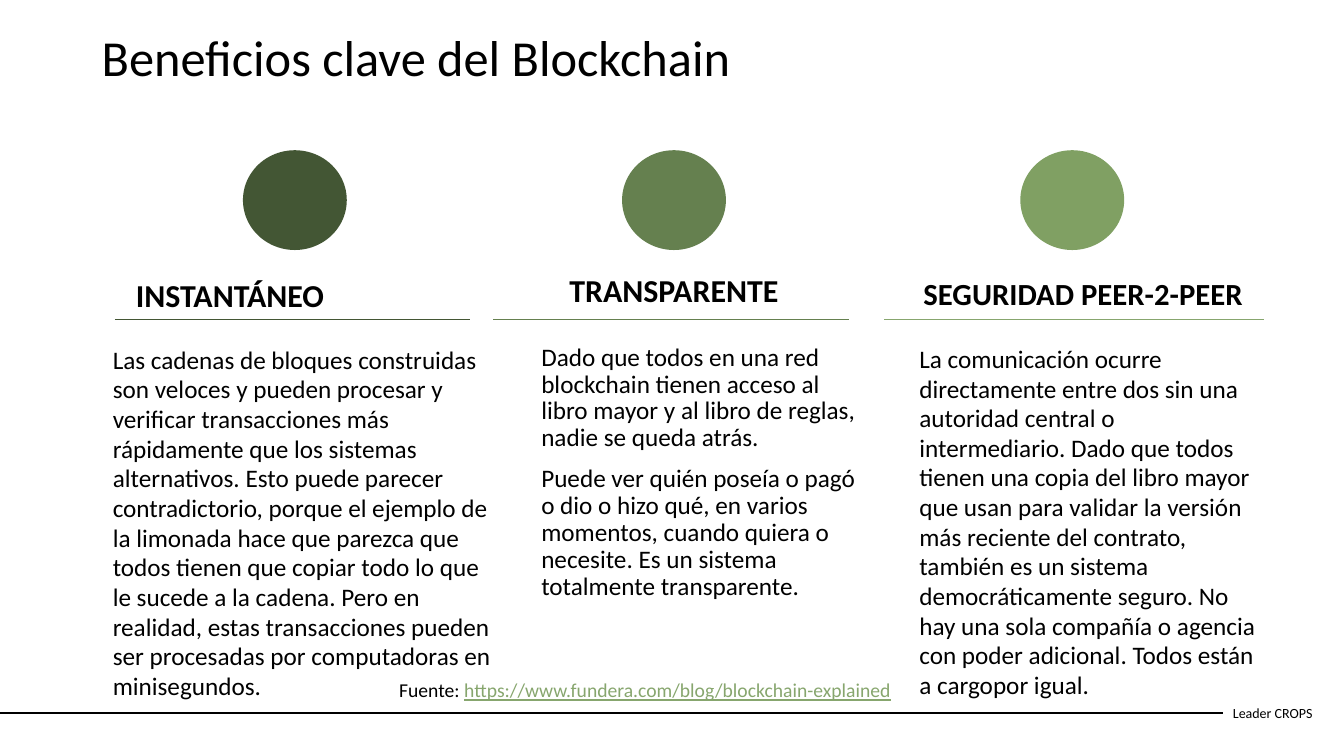
import pptx
import pptx.util
import pptx.dml.color
import pptx.enum.shapes
import pptx.enum.text
import pptx.oxml.ns
from lxml import etree

Inches = pptx.util.Inches
Pt = pptx.util.Pt
ALIGN = pptx.enum.text.PP_ALIGN
ANCHOR = pptx.enum.text.MSO_ANCHOR

FONT = "Calibri"
COLORS = {
    "text": "000000",
    "instant": "435634",
    "transparent": "65804F",
    "secure": "80A063",
    "accent": "87A66E",
}

BENEFITS = [
    {
        "color": "instant", "rule_color": "instant", "rule_width": 1,
        "circle_left": 2.41, "rule": (1.14, 4.66),
        "heading": "INSTANTÁNEO", "heading_box": (1.25, 2.68, 3.35, 0.98),
        "heading_size": 22.8, "heading_align": ALIGN.LEFT, "heading_spacing": 1.0,
        "body_box": (1.02, 3.38, 4.02, 2.53), "body_spacing": 0.98,
        "body": [
            "Las cadenas de bloques construidas son veloces y pueden procesar y "
            "verificar transacciones más rápidamente que los sistemas alternativos. "
            "Esto puede parecer contradictorio, porque el ejemplo de la limonada hace "
            "que parezca que todos tienen que copiar todo lo que le sucede a la cadena. "
            "Pero en realidad, estas transacciones pueden ser procesadas por "
            "computadoras en minisegundos.",
        ],
    },
    {
        "color": "transparent", "rule_color": "transparent", "rule_width": 0.5,
        "circle_left": 6.17, "rule": (4.89, 8.42),
        "heading": "TRANSPARENTE", "heading_box": (5.01, 2.68, 3.35, 0.98),
        "heading_size": 22.8, "heading_align": ALIGN.CENTER, "heading_spacing": 0.9,
        "body_box": (5.27, 3.37, 3.35, 2.7), "body_spacing": 0.89,
        "body": [
            "Dado que todos en una red blockchain tienen acceso al libro mayor y al "
            "libro de reglas, nadie se queda atrás.",
            "Puede ver quién poseía o pagó o dio o hizo qué, en varios momentos, cuando "
            "quiera o necesite. Es un sistema totalmente transparente.",
        ],
    },
    {
        "color": "secure", "rule_color": "accent", "rule_width": 0.5,
        "circle_left": 10.12, "rule": (8.77, 12.54),
        "heading": "SEGURIDAD PEER-2-PEER", "heading_box": (9.06, 2.68, 4.12, 0.39),
        "heading_size": 21.9, "heading_align": ALIGN.LEFT, "heading_spacing": 1.0,
        "body_box": (9.02, 3.37, 3.53, 2.52), "body_spacing": 0.98,
        "body": [
            "La comunicación ocurre directamente entre dos sin una autoridad central o "
            "intermediario. Dado que todos tienen una copia del libro mayor que usan "
            "para validar la versión más reciente del contrato, también es un sistema "
            "democráticamente seguro. No hay una sola compañía o agencia con poder "
            "adicional. Todos están a cargopor igual.",
        ],
    },
]


def rgb(name):
    return pptx.dml.color.RGBColor.from_string(COLORS[name])


def add_text(slide, box, paragraphs, size, bold=False, align=ALIGN.LEFT,
             spacing=1.0, anchor=ANCHOR.TOP, wrap=True):
    frame = slide.shapes.add_textbox(*map(Inches, box)).text_frame
    frame.word_wrap = wrap
    frame.vertical_anchor = anchor
    for index, words in enumerate(paragraphs):
        paragraph = frame.add_paragraph() if index else frame.paragraphs[0]
        paragraph.text = words
        paragraph.alignment = align
        paragraph.line_spacing = spacing
        if index:
            paragraph.space_before = Pt(10)
        paragraph.font.name = FONT
        paragraph.font.size = Pt(size)
        paragraph.font.bold = bold
        paragraph.font.color.rgb = rgb("text")
    return frame


def add_rule(slide, left, right, top, color, width):
    rule = slide.shapes.add_connector(
        pptx.enum.shapes.MSO_CONNECTOR.STRAIGHT,
        Inches(left), Inches(top), Inches(right), Inches(top))
    rule.line.color.rgb = rgb(color)
    rule.line.width = Pt(width)
    etree.SubElement(rule._element.spPr, pptx.oxml.ns.qn("a:effectLst"))


def add_title(slide, box):
    add_text(slide, box, ["Beneficios clave del Blockchain"], 36)


def add_benefit(slide, benefit, top):
    circle = slide.shapes.add_shape(
        pptx.enum.shapes.MSO_SHAPE.OVAL,
        Inches(benefit["circle_left"]), Inches(top), Inches(1.03), Inches(0.99))
    circle.shadow.inherit = False
    circle.fill.solid()
    circle.fill.fore_color.rgb = rgb(benefit["color"])
    circle.line.fill.background()
    add_text(slide, benefit["heading_box"], [benefit["heading"]],
             benefit["heading_size"], bold=True, align=benefit["heading_align"],
             spacing=benefit["heading_spacing"])
    add_rule(slide, *benefit["rule"], top + 1.68,
             benefit["rule_color"], benefit["rule_width"])
    add_text(slide, benefit["body_box"], benefit["body"], 18,
             spacing=benefit["body_spacing"])


def add_source(slide, box):
    source = add_text(slide, box, ["Fuente: "], 14, wrap=False).paragraphs[0]
    address = source.add_run()
    address.text = "https://www.fundera.com/blog/blockchain-explained"
    address.font.color.rgb = rgb("accent")
    address.font.underline = True


def add_footer(slide, left, top, width, height):
    add_rule(slide, 0, left, top + height / 2, "text", 1.5)
    add_text(slide, (left, top, width, height), ["Leader CROPS"], 10,
             anchor=ANCHOR.MIDDLE)


def main():
    deck = pptx.Presentation()
    deck.slide_width = Inches(13.33)
    deck.slide_height = Inches(7.5)
    slide = deck.slides.add_slide(deck.slide_layouts[6])
    add_footer(slide, 12.13, 6.87, 1.01, 0.4)
    add_title(slide, (0.91, 0.21, 11.59, 0.88))
    for benefit in BENEFITS:
        add_benefit(slide, benefit, 1.49)
    add_source(slide, (3.86, 6.68, 5.2, 0.34))
    deck.save("out.pptx")


if __name__ == "__main__":
    main()
